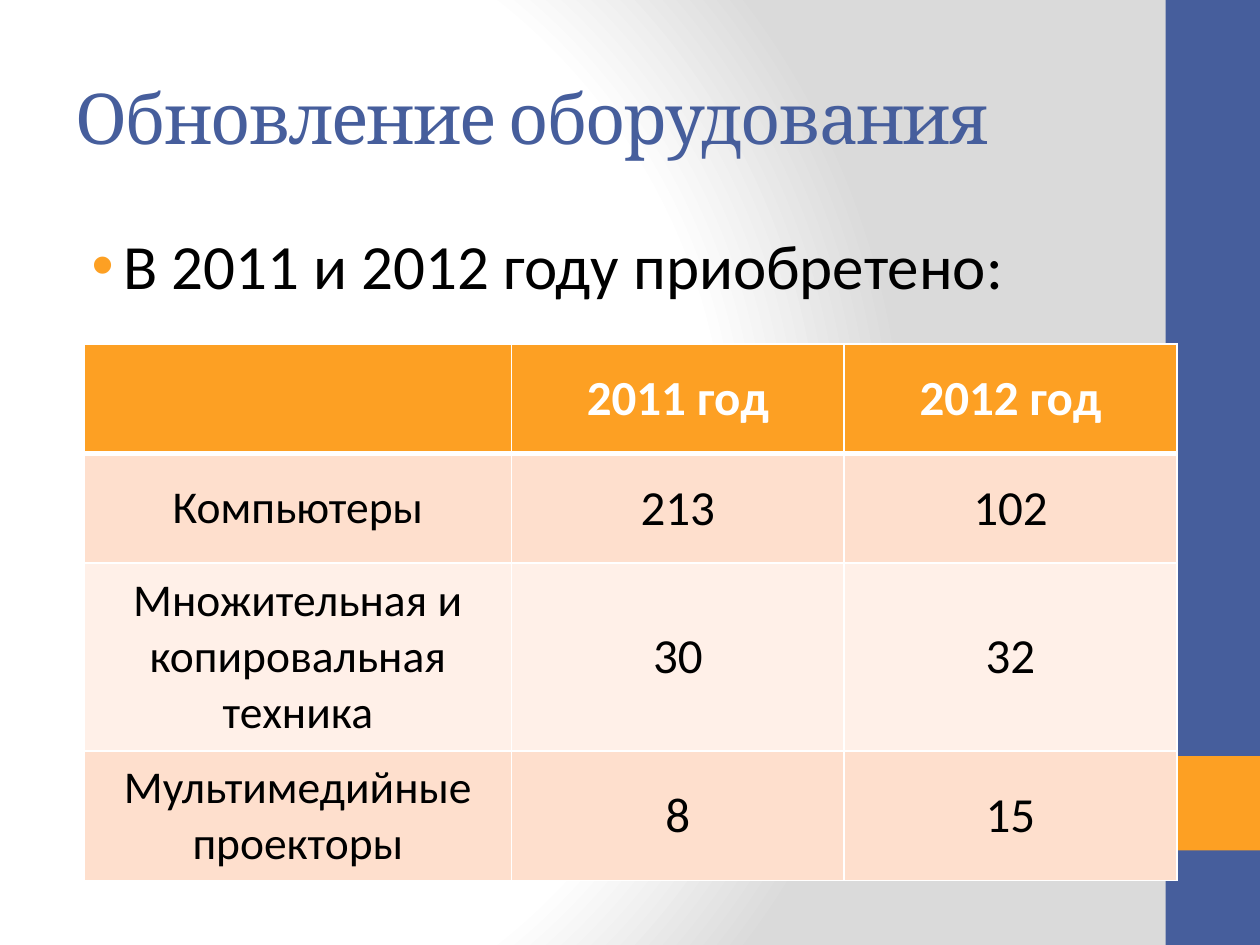
from pptx import Presentation, util as u
from pptx.dml.color import RGBColor
from pptx.enum import shapes, text
from pptx.oxml import parse_xml
from pptx.oxml.ns import nsdecls, qn

BLUE, ORANGE, WHITE, BLACK = "465E9C", "FDA023", "FFFFFF", "000000"


def paint(fill, color):
    fill.solid()
    fill.fore_color.rgb = RGBColor.from_string(color)


def style(paragraph, size, color, font="Calibri", bold=False):
    for run in paragraph.runs:
        run.font.name = font
        run.font.size = u.Pt(size)
        run.font.bold = bold
        paint(run.font.fill, color)


presentation = Presentation()
presentation.slide_width, presentation.slide_height = u.Inches(10), u.Inches(7.5)
slide = presentation.slides.add_slide(presentation.slide_layouts[5])

slide.background.fill.gradient()
gradient = slide.element.find(".//" + qn("a:gradFill"))
stops = "".join(
    f'<a:gs pos="{position * 1000}"><a:srgbClr val="{color}"/></a:gs>'
    for position, color in [(0, WHITE), (75, WHITE), (100, "DADADA")])
gradient.getparent().replace(gradient, parse_xml(
    f'<a:gradFill {nsdecls("a")} rotWithShape="1"><a:gsLst>{stops}</a:gsLst>'
    '<a:path path="circle"><a:fillToRect l="20000" t="50000" r="100000" b="50000"/>'
    '</a:path></a:gradFill>'))

for top, height, color in [(0, 7.5, BLUE), (6, 0.75, ORANGE)]:
    band = slide.shapes.add_shape(shapes.MSO_SHAPE.RECTANGLE, u.Inches(9.25),
                                  u.Inches(top), u.Inches(0.75), u.Inches(height))
    band.shadow.inherit = False
    paint(band.fill, color)
    band.line.fill.background()

title = slide.shapes.title
title.left, title.top = u.Inches(0.5), u.Inches(0.3)
title.width, title.height = u.Inches(8.33), u.Inches(1.25)
title.text_frame.text = "Обновление оборудования"
title.text_frame.vertical_anchor = text.MSO_ANCHOR.MIDDLE
paragraph = title.text_frame.paragraphs[0]
paragraph.alignment = text.PP_ALIGN.LEFT
style(paragraph, 40, BLUE, "Cambria")
paragraph.runs[0].font._element.set("spc", "-100")

body = slide.shapes.add_textbox(u.Inches(0.5), u.Inches(1.75),
                                u.Inches(8.33), u.Inches(5.25))
body.text_frame.word_wrap = True
body.text_frame.text = "В 2011 и 2012 году приобретено:"
paragraph = body.text_frame.paragraphs[0]
style(paragraph, 36, BLACK)
properties = paragraph._p.get_or_add_pPr()
properties.set("marL", str(u.Inches(0.38)))
properties.set("indent", str(u.Inches(-0.25)))
for bullet in [f'<a:buClr {nsdecls("a")}><a:srgbClr val="{ORANGE}"/></a:buClr>',
               f'<a:buFont {nsdecls("a")} typeface="Arial"/>',
               f'<a:buChar {nsdecls("a")} char="•"/>']:
    properties.append(parse_xml(bullet))

rows = [
    ("", "2011 год", "2012 год"),
    ("Компьютеры", "213", "102"),
    ("Множительная и копировальная техника", "30", "32"),
    ("Мультимедийные проекторы", "8", "15"),
]
row_fills = [ORANGE, "FEDFCD", "FFF0E8", "FEDFCD"]
table = slide.shapes.add_table(4, 3, u.Inches(0.67), u.Inches(2.73),
                               u.Inches(8.66), u.Inches(4.25)).table
for column, width in zip(table.columns, [3.39, 2.64, 2.64]):
    column.width = u.Inches(width)
for row, height in zip(table.rows, [0.87, 0.87, 1.49, 1.03]):
    row.height = u.Inches(height)

for row_index, values in enumerate(rows):
    header = row_index == 0
    for column_index, value in enumerate(values):
        cell = table.cell(row_index, column_index)
        cell.text_frame.text = value
        cell.vertical_anchor = text.MSO_ANCHOR.MIDDLE
        paragraph = cell.text_frame.paragraphs[0]
        paragraph.alignment = text.PP_ALIGN.CENTER
        style(paragraph, 28 if column_index else 26,
              WHITE if header else BLACK, bold=header)
        paint(cell.fill, row_fills[row_index])
        for position, side in enumerate("LRTB"):
            thick = (header and side == "B") or (row_index == 1 and side == "T")
            cell._tc.get_or_add_tcPr().insert(position, parse_xml(
                f'<a:ln{side} {nsdecls("a")} w="{u.Pt(3 if thick else 1)}"><a:solidFill>'
                f'<a:srgbClr val="{WHITE}"/></a:solidFill></a:ln{side}>'))

presentation.save("out.pptx")
